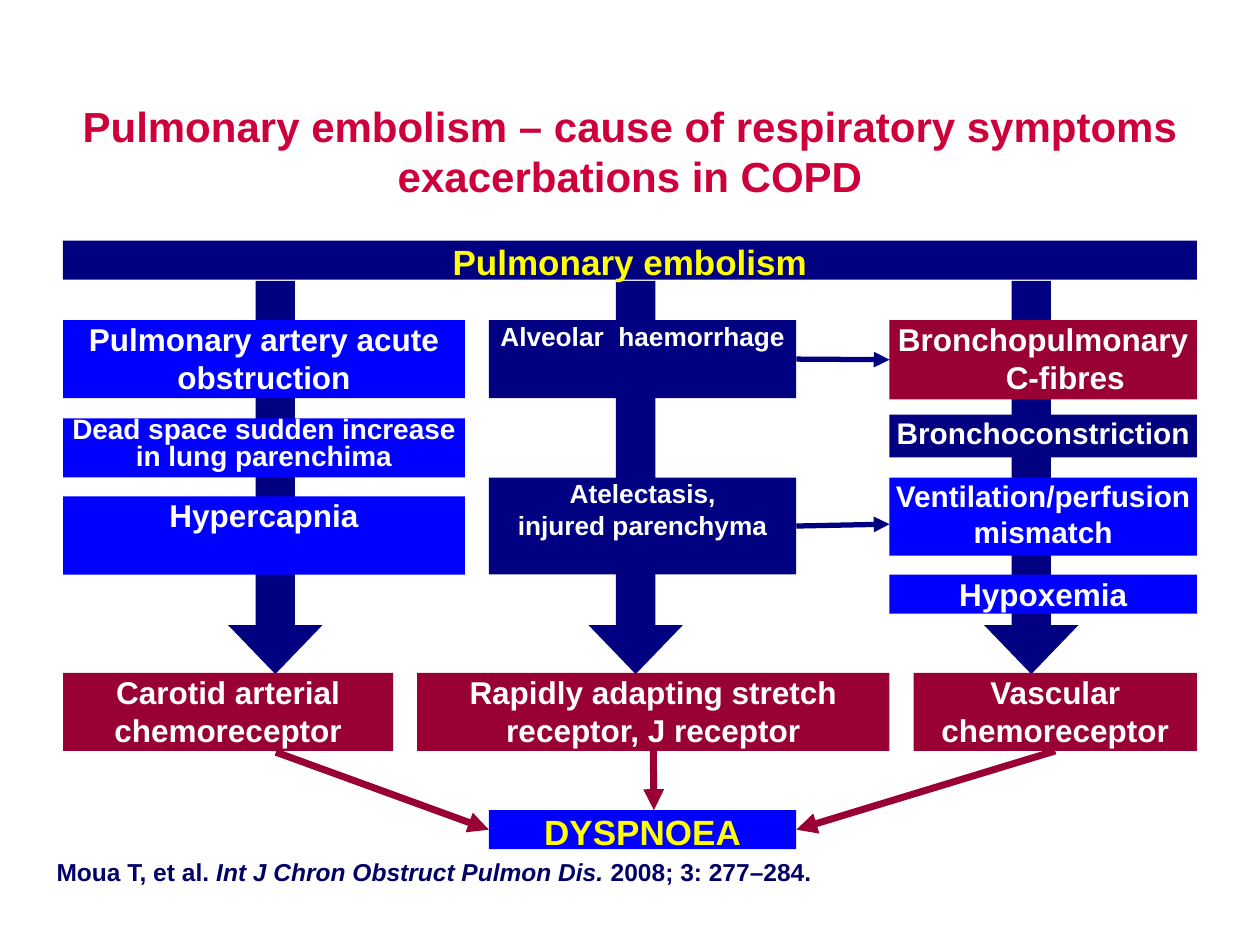
import pptx
import pptx.util
import pptx.dml.color
import pptx.enum.shapes
import pptx.enum.text
import pptx.oxml.ns
from lxml import etree

Inches = pptx.util.Inches
Pt = pptx.util.Pt
MSO_SHAPE = pptx.enum.shapes.MSO_SHAPE
NAVY, BLUE, MAROON = "000080", "0000FF", "990033"
WHITE, YELLOW = "FFFFFF", "FFFF00"


def rgb(value):
    return pptx.dml.color.RGBColor.from_string(value)


def write(sp, text, size=18, color=WHITE, align="CENTER", anchor="TOP", inset=0, spacing=None):
    """Fill a shape with bold Arial; newlines split paragraphs, asterisks enclose italics."""
    tf = sp.text_frame
    tf.word_wrap = True
    tf.vertical_anchor = getattr(pptx.enum.text.MSO_ANCHOR, anchor)
    tf.margin_left = tf.margin_right = Inches(inset)
    tf.margin_top = tf.margin_bottom = Inches(inset / 2)
    for i, line in enumerate(text.split("\n")):
        p = tf.add_paragraph() if i else tf.paragraphs[0]
        p.alignment = getattr(pptx.enum.text.PP_ALIGN, align)
        if spacing:
            p.line_spacing = spacing
        for j, part in enumerate(line.split("*")):
            r = p.add_run()
            r.text = part
            r.font.name = "Arial"
            r.font.size = Pt(size)
            r.font.bold = True
            r.font.italic = j % 2 == 1
            r.font.color.rgb = rgb(color)


prs = pptx.Presentation()
prs.slide_width, prs.slide_height = Inches(10), Inches(7.5)
s = prs.slides.add_slide(prs.slide_layouts[6])

title = s.shapes.add_textbox(Inches(0.5), Inches(0.66), Inches(9), Inches(1.07))
write(title, "Pulmonary embolism – cause of respiratory symptoms exacerbations in COPD",
      size=24, color="CE003C", anchor="MIDDLE", inset=0.1)

# Block arrows that run behind the boxes
for left in (1.81, 4.67, 7.81):
    sp = s.shapes.add_shape(MSO_SHAPE.DOWN_ARROW, Inches(left), Inches(2.23),
                            Inches(0.75), Inches(3.12))
    sp.adjustments[0], sp.adjustments[1] = 0.417, 0.519
    sp.shadow.inherit = False
    sp.fill.solid()
    sp.fill.fore_color.rgb = rgb(NAVY)
    sp.line.fill.background()

# name: left, top, width, height, fill, text, text format
boxes = {
    "embolism": (0.5, 1.91, 9, 0.31, NAVY, "Pulmonary embolism", dict(size=20, color=YELLOW)),
    "obstruction": (0.5, 2.54, 3.19, 0.62, BLUE, "Pulmonary artery acute obstruction", {}),
    "dead space": (0.5, 3.32, 3.19, 0.47, BLUE, "Dead space sudden increase in lung parenchima",
                   dict(size=16, spacing=0.8)),
    "hypercapnia": (0.5, 3.94, 3.19, 0.62, BLUE, "Hypercapnia", {}),
    "haemorrhage": (3.88, 2.54, 2.44, 0.62, NAVY, "Alveolar  haemorrhage", dict(size=15)),
    "atelectasis": (3.88, 3.79, 2.44, 0.77, NAVY, "Atelectasis,\ninjured parenchyma",
                    dict(size=15)),
    "c-fibres": (7.06, 2.54, 2.44, 0.63, MAROON, "Bronchopulmonary\nC-fibres", {}),
    "constriction": (7.06, 3.29, 2.44, 0.34, NAVY, "Bronchoconstriction", dict(size=17)),
    "mismatch": (7.06, 3.79, 2.44, 0.62, BLUE, "Ventilation/perfusion mismatch", dict(size=17)),
    "hypoxemia": (7.06, 4.56, 2.44, 0.31, BLUE, "Hypoxemia", {}),
    "carotid": (0.5, 5.34, 2.62, 0.62, MAROON, "Carotid arterial chemoreceptor", {}),
    "stretch": (3.31, 5.34, 3.75, 0.62, MAROON, "Rapidly adapting stretch receptor, J receptor", {}),
    "vascular": (7.25, 5.34, 2.25, 0.62, MAROON, "Vascular chemoreceptor", {}),
    "dyspnoea": (3.88, 6.43, 2.44, 0.31, BLUE, "DYSPNOEA", dict(size=20, color=YELLOW)),
}
shapes = {}
for name, (left, top, width, height, fill, text, style) in boxes.items():
    sp = s.shapes.add_shape(MSO_SHAPE.RECTANGLE, Inches(left), Inches(top),
                            Inches(width), Inches(height))
    sp.shadow.inherit = False
    sp.fill.solid()
    sp.fill.fore_color.rgb = rgb(fill)
    sp.line.fill.background()
    write(sp, text, **style)
    shapes[name] = sp

# "C-fibres" sits right of centre
p = shapes["c-fibres"].text_frame.paragraphs[1]
p._p.get_or_add_pPr().set("marL", str(Inches(0.35)))

# start, end, colour, width, joined start (box, side), joined end (box, side)
arrows = [
    ((6.32, 2.85), (7.06, 2.85), NAVY, 3, ("haemorrhage", 3), ("c-fibres", 1)),
    ((6.32, 4.16), (7.06, 4.16), NAVY, 3, ("atelectasis", 3), None),
    ((2.19, 5.97), (3.88, 6.59), MAROON, 4, None, ("dyspnoea", 1)),
    ((5.19, 5.97), (5.19, 6.43), MAROON, 4, ("stretch", 2), None),
    ((8.38, 5.97), (6.32, 6.59), MAROON, 4, ("vascular", 2), ("dyspnoea", 3)),
]
for (x1, y1), (x2, y2), color, width, start, end in arrows:
    line = s.shapes.add_connector(pptx.enum.shapes.MSO_CONNECTOR.STRAIGHT,
                                  Inches(x1), Inches(y1), Inches(x2), Inches(y2))
    if start:
        line.begin_connect(shapes[start[0]], start[1])
    if end:
        line.end_connect(shapes[end[0]], end[1])
    line.line.color.rgb = rgb(color)
    line.line.width = Pt(width)
    ln = line.line._get_or_add_ln()
    etree.SubElement(ln, pptx.oxml.ns.qn("a:tailEnd"), type="triangle")
    etree.SubElement(line._element.spPr, pptx.oxml.ns.qn("a:effectLst"))

citation = s.shapes.add_textbox(Inches(0.35), Inches(6.82), Inches(6.38), Inches(0.26))
write(citation, "Moua T, et al. *Int J Chron Obstruct Pulmon Dis.* 2008; 3: 277–284.",
      size=14, color="000066", align="LEFT", inset=0.1, spacing=0.7)

prs.save("out.pptx")
